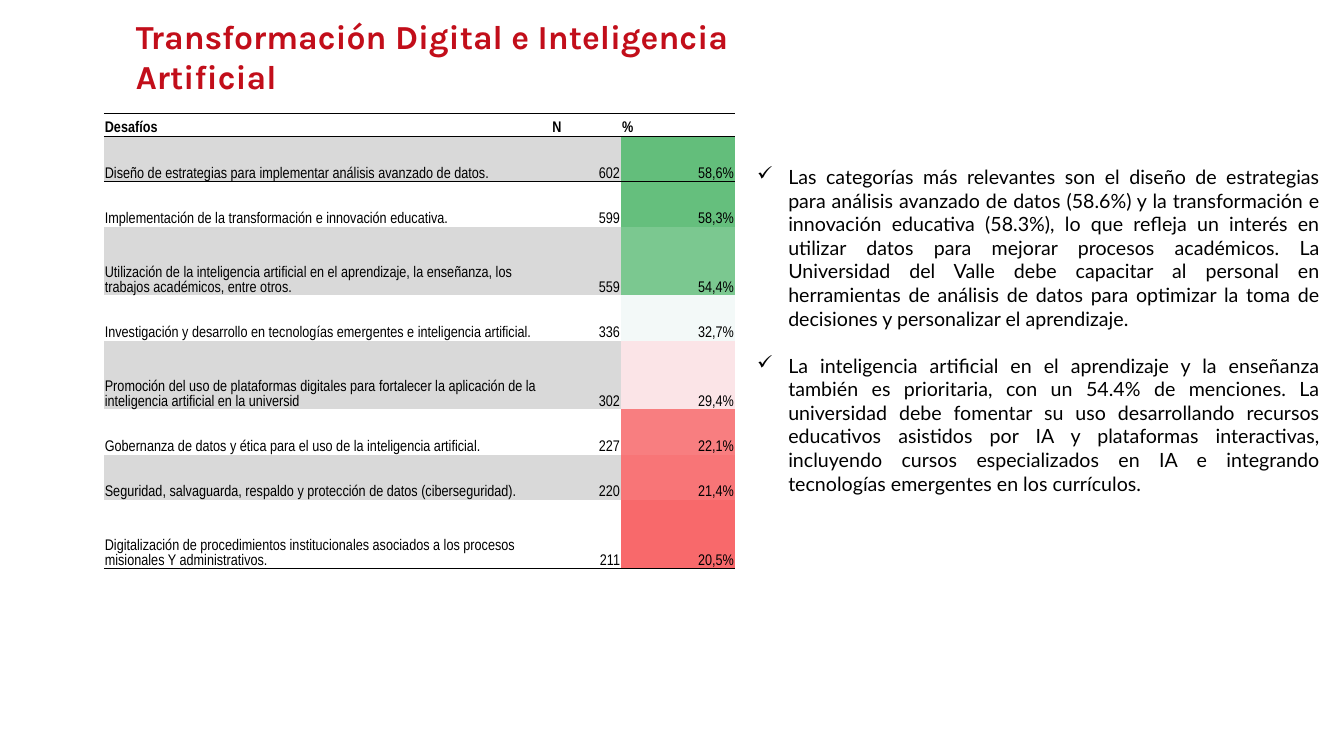
"""Build the slide on challenges of digital transformation and AI."""
import pptx
import pptx.dml.color
import pptx.enum.text
import pptx.oxml
import pptx.oxml.ns
import pptx.util

EMU_PER_PX = 9144
RED = pptx.dml.color.RGBColor(0xC2, 0x0E, 0x1A)
BLACK = pptx.dml.color.RGBColor(0, 0, 0)
GREY = pptx.dml.color.RGBColor(0xD9, 0xD9, 0xD9)
DEEP_GREEN = pptx.dml.color.RGBColor(0x63, 0xBE, 0x7B)
GREEN = pptx.dml.color.RGBColor(0x65, 0xBF, 0x7D)
SOFT_GREEN = pptx.dml.color.RGBColor(0x7B, 0xC8, 0x90)
ICE = pptx.dml.color.RGBColor(0xF3, 0xF9, 0xF8)
PINK = pptx.dml.color.RGBColor(0xFB, 0xE4, 0xE7)
SOFT_CORAL = pptx.dml.color.RGBColor(0xF8, 0x7E, 0x80)
CORAL = pptx.dml.color.RGBColor(0xF8, 0x75, 0x77)
DEEP_CORAL = pptx.dml.color.RGBColor(0xF8, 0x69, 0x6B)

LEFT = pptx.enum.text.PP_ALIGN.LEFT
RIGHT = pptx.enum.text.PP_ALIGN.RIGHT
JUSTIFY = pptx.enum.text.PP_ALIGN.JUSTIFY
PLAIN_STYLE = "{2D5ABB26-0587-4C30-8999-92F81FD0307C}"
COLUMN_WIDTHS = (444, 69, 113)
HEADER_HEIGHT, ONE_LINE_HEIGHT, TWO_LINE_HEIGHT = 23, 45, 68
ONE_LINE_CHARACTERS = 80

TITLE = "Transformación Digital e Inteligencia Artificial"
HEADER = ("Desafíos", "N", "%")
CHALLENGES = (
    ("Diseño de estrategias para implementar análisis avanzado de datos.",
     "602", "58,6%", DEEP_GREEN),
    ("Implementación de la transformación e innovación educativa.",
     "599", "58,3%", GREEN),
    ("Utilización de la inteligencia artificial en el aprendizaje, la enseñanza, "
     "los trabajos académicos, entre otros.", "559", "54,4%", SOFT_GREEN),
    ("Investigación y desarrollo en tecnologías emergentes e inteligencia artificial.",
     "336", "32,7%", ICE),
    ("Promoción del uso de plataformas digitales para fortalecer la aplicación de "
     "la inteligencia artificial en la universid", "302", "29,4%", PINK),
    ("Gobernanza de datos y ética para el uso de la inteligencia artificial.",
     "227", "22,1%", SOFT_CORAL),
    ("Seguridad, salvaguarda, respaldo y protección de datos (ciberseguridad).",
     "220", "21,4%", CORAL),
    ("Digitalización de procedimientos institucionales asociados a los procesos "
     "misionales Y administrativos.", "211", "20,5%", DEEP_CORAL),
)
FINDINGS = (
    "Las categorías más relevantes son el diseño de estrategias para análisis "
    "avanzado de datos (58.6%) y la transformación e innovación educativa (58.3%), "
    "lo que refleja un interés en utilizar datos para mejorar procesos académicos. "
    "La Universidad del Valle debe capacitar al personal en herramientas de análisis "
    "de datos para optimizar la toma de decisiones y personalizar el aprendizaje.",
    "La inteligencia artificial en el aprendizaje y la enseñanza también es "
    "prioritaria, con un 54.4% de menciones. La universidad debe fomentar su uso "
    "desarrollando recursos educativos asistidos por IA y plataformas interactivas, "
    "incluyendo cursos especializados en IA e integrando tecnologías emergentes en "
    "los currículos.",
)


def px(length):
    return pptx.util.Emu(length * EMU_PER_PX)


def write(paragraph, text, *, font, size, color=BLACK, bold=False, align=LEFT,
          bullet=None, hanging=0, space_before=0):
    if bullet:
        properties = paragraph._p.get_or_add_pPr()
        properties.set("marL", str(px(hanging)))
        properties.set("indent", str(-px(hanging)))
        mark = pptx.oxml.parse_xml(
            f'<a:buChar {pptx.oxml.ns.nsdecls("a")} char="{bullet}"/>')
        properties.append(mark)
    paragraph.text = text
    paragraph.alignment = align
    if space_before:
        paragraph.space_before = pptx.util.Pt(space_before)
    paragraph.font.name = font
    paragraph.font.size = pptx.util.Pt(size)
    paragraph.font.bold = bold
    paragraph.font.color.rgb = color


def add_text_frame(slide, left, top, width, height):
    frame = slide.shapes.add_textbox(px(left), px(top), px(width), px(height)).text_frame
    frame.word_wrap = True
    return frame


def rule_cell(cell, sides):
    properties = cell._tc.get_or_add_tcPr()
    for position, side in enumerate(sides):
        properties.insert(position, pptx.oxml.parse_xml(
            f'<a:ln{side} {pptx.oxml.ns.nsdecls("a")} w="{pptx.util.Pt(0.5)}">'
            f'<a:solidFill><a:srgbClr val="{BLACK}"/></a:solidFill></a:ln{side}>'))


def fill_cell(cell, text, *, fill=None, rules="", bold=False, align=LEFT):
    cell.margin_left = cell.margin_right = cell.margin_top = px(1)
    cell.margin_bottom = 0
    cell.vertical_anchor = pptx.enum.text.MSO_ANCHOR.BOTTOM
    write(cell.text_frame.paragraphs[0], text, font="Arial Narrow", size=11,
          bold=bold, align=align)
    if fill is None:
        cell.fill.background()
    else:
        cell.fill.solid()
        cell.fill.fore_color.rgb = fill
    rule_cell(cell, rules)


def add_challenges_table(slide, left, top):
    heights = [HEADER_HEIGHT] + [
        TWO_LINE_HEIGHT if len(challenge) > ONE_LINE_CHARACTERS else ONE_LINE_HEIGHT
        for challenge, *_ in CHALLENGES]
    table = slide.shapes.add_table(
        len(heights), len(HEADER), px(left), px(top),
        px(sum(COLUMN_WIDTHS)), px(sum(heights))).table
    table._tbl.tblPr.find(pptx.oxml.ns.qn("a:tableStyleId")).text = PLAIN_STYLE
    table.first_row = table.horz_banding = False
    for column, width in zip(table.columns, COLUMN_WIDTHS):
        column.width = px(width)
    for row, height in zip(table.rows, heights):
        row.height = px(height)
    for column, heading in enumerate(HEADER):
        fill_cell(table.cell(0, column), heading, rules="TB", bold=True)
    for row, (challenge, count, share, heat) in enumerate(CHALLENGES, start=1):
        band = GREY if row % 2 else None
        rules = {1: "T", len(CHALLENGES): "B"}.get(row, "")
        fill_cell(table.cell(row, 0), challenge, fill=band, rules=rules)
        fill_cell(table.cell(row, 1), count, fill=band, rules=rules, align=RIGHT)
        fill_cell(table.cell(row, 2), share, fill=heat, rules=rules, align=RIGHT)


def add_findings(slide, left, top, width, height):
    frame = add_text_frame(slide, left, top, width, height)
    for index, finding in enumerate(FINDINGS):
        paragraph = frame.add_paragraph() if index else frame.paragraphs[0]
        write(paragraph, finding, font="Lato", size=14, align=JUSTIFY, bullet="✓",
              hanging=31, space_before=17 if index else 0)


def main():
    presentation = pptx.Presentation()
    presentation.slide_width, presentation.slide_height = px(1333), px(750)
    slide = presentation.slides.add_slide(presentation.slide_layouts[6])
    title = add_text_frame(slide, 125, 11, 616, 91)
    write(title.paragraphs[0], TITLE, font="Karla", size=24, color=RED, bold=True)
    add_challenges_table(slide, 103, 112)
    add_findings(slide, 741, 159, 578, 340)
    presentation.save("out.pptx")


if __name__ == "__main__":
    main()
